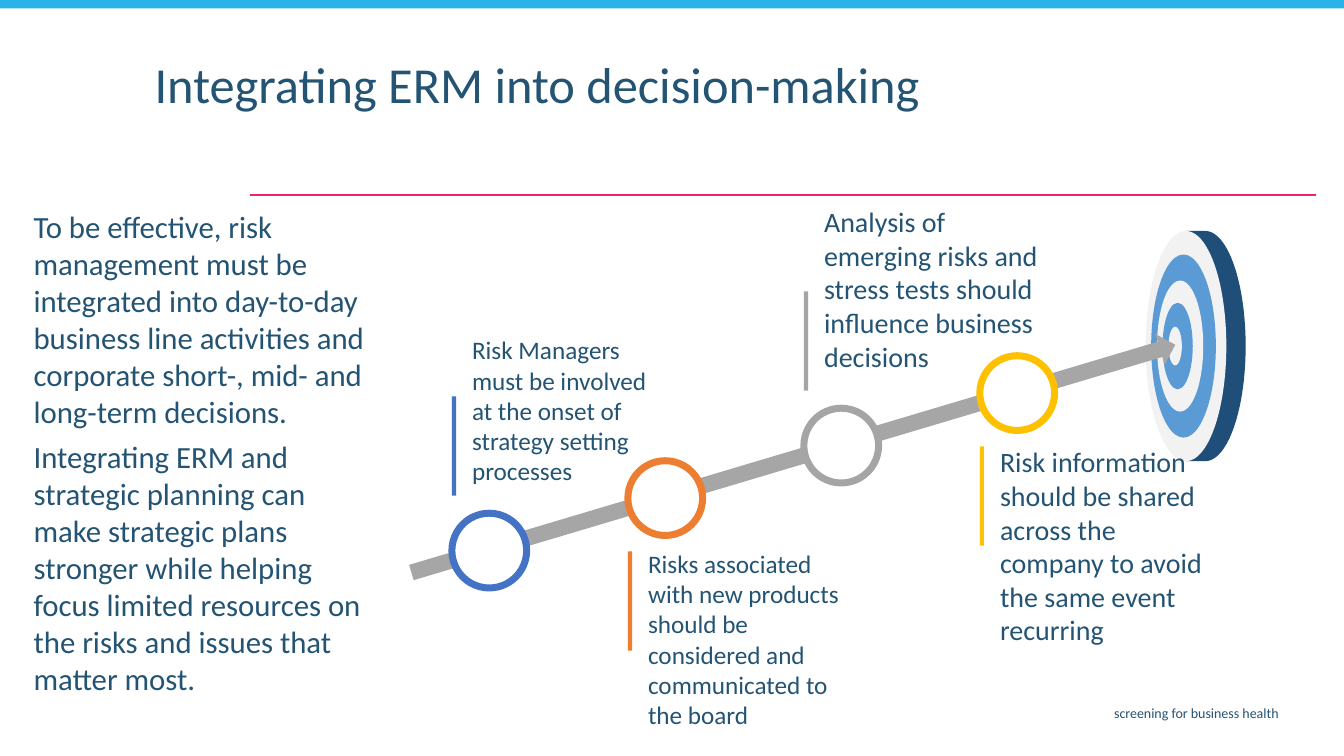
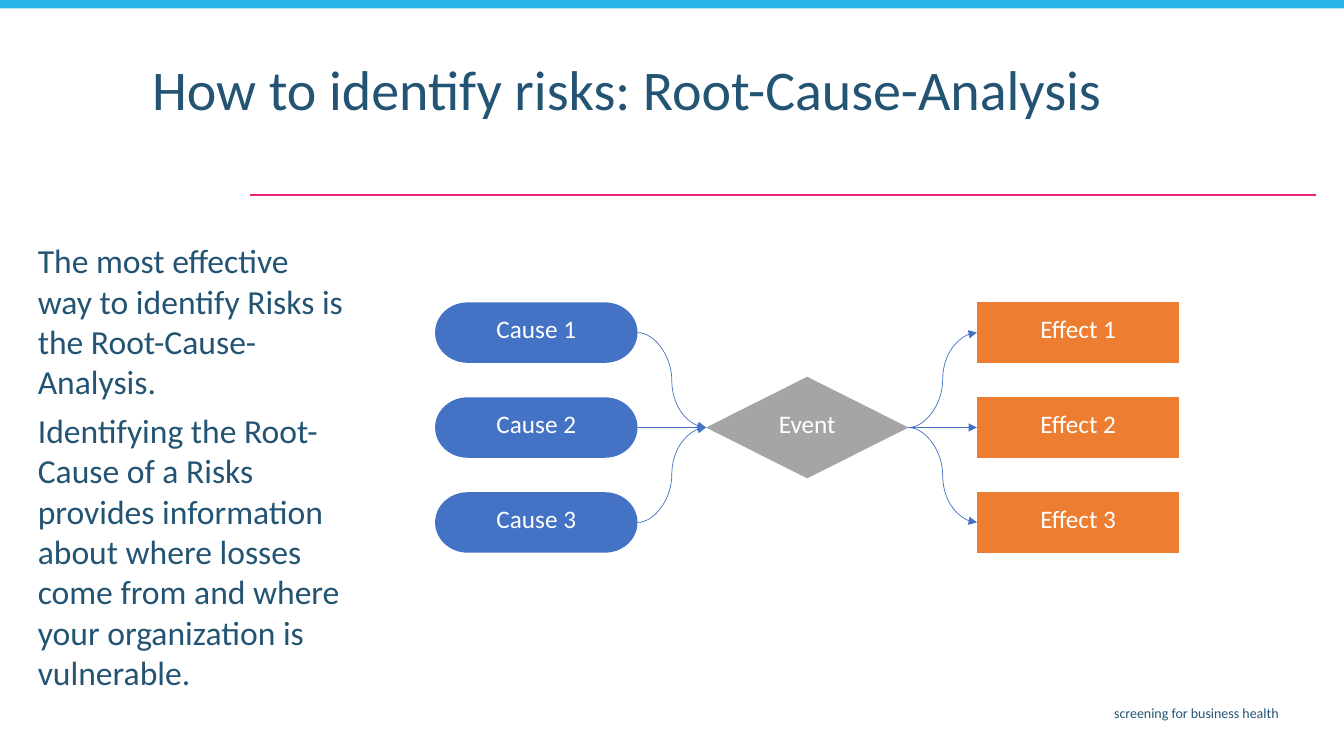
from math import cos, pi, sin

from pptx import Presentation
from pptx.dml.color import RGBColor
from pptx.enum.shapes import MSO_CONNECTOR, MSO_SHAPE
from pptx.enum.text import MSO_ANCHOR, MSO_AUTO_SIZE, PP_ALIGN
from pptx.oxml.ns import qn
from pptx.oxml.xmlchemy import OxmlElement
from pptx.util import Emu, Pt

RECT, OVAL, ARROW = MSO_SHAPE.RECTANGLE, MSO_SHAPE.OVAL, MSO_SHAPE.RIGHT_ARROW
PILL = MSO_SHAPE.FLOWCHART_TERMINATOR
BOX = MSO_SHAPE.FLOWCHART_PROCESS
GEM = MSO_SHAPE.FLOWCHART_DECISION
FLAT, CURVE = MSO_CONNECTOR.STRAIGHT, MSO_CONNECTOR.CURVE
TOP, MID = MSO_ANCHOR.TOP, MSO_ANCHOR.MIDDLE
LEFT, MIDST, RIGHT = PP_ALIGN.LEFT, PP_ALIGN.CENTER, PP_ALIGN.RIGHT
FONT = "Calibri"
HUES = {
    "ink": "245473", "band": "29B3E8", "rule": "EC2179", "white": "FFFFFF",
    "blue": "4472C4", "orange": "ED7D31", "grey": "A5A5A5", "gold": "FFC000",
    "shaft": "A6A6A6", "rim": "1F4E79", "pale": "F2F2F2", "sky": "5B9BD5",
}
INK = {name: RGBColor.from_string(code) for name, code in HUES.items()}

deck = Presentation()
deck.slide_width, deck.slide_height = Emu(12192000), Emu(6858000)
CELL = deck.slide_width // 160  # square cells: 160 columns by 90 rows


def cells(*spans):
    return [Emu(round(span * CELL)) for span in spans]


def say(frame, texts, size, hue="ink", pad=(1.2, 0.6), align=LEFT,
        anchor=TOP, lead=None, gap=0):
    frame.word_wrap, frame.auto_size = True, MSO_AUTO_SIZE.NONE
    frame.vertical_anchor = anchor
    side, edge = cells(*pad)
    frame.margin_left = frame.margin_right = side
    frame.margin_top = frame.margin_bottom = edge
    for i, text in enumerate(texts):
        para = frame.add_paragraph() if i else frame.paragraphs[0]
        props = para._p.get_or_add_pPr()
        props.set("marL", "0")
        props.set("indent", "0")
        props.append(OxmlElement("a:buNone"))
        para.alignment, para.line_spacing = align, lead
        para.space_before = Pt(gap if i else 0)
        for j, part in enumerate(text.split("\n")):
            if j:
                para.add_line_break()
            run = para.add_run()
            run.text = part
            run.font.name, run.font.size = FONT, Pt(size)
            run.font.color.rgb = INK[hue]


# Slides with their titles and body texts
plain = deck.slide_layouts[1]
for spot in list(plain.placeholders):
    if spot.placeholder_format.idx >= 10:
        spot.element.getparent().remove(spot.element)

pages = []
for title, size, head, texts, small, area in [
    ("Integrating ERM into decision-making", 36, (17.2, 6.5, 116, 9.1),
     ["To be effective, risk management must be integrated into day-to-day "
      "business line activities and corporate short-, mid- and long-term "
      "decisions.",
      "Integrating ERM and strategic planning can make strategic plans "
      "stronger while helping focus limited resources on the risks and "
      "issues that matter most."], 22, (2.9, 24.2, 43.1, 55.4)),
    ("How to identify risks: Root-Cause-Analysis", 40, (16.9, 6.8, 116, 9.1),
     ["The most effective way to identify Risks is the Root-Cause-Analysis.",
      "Identifying the Root-Cause of a Risks provides information about "
      "where losses come from and where your organization is vulnerable."],
     24, (3.4, 28.1, 39.4, 56)),
]:
    page = deck.slides.add_slide(plain)
    top, body = page.placeholders
    for spot, place in ((top, head), (body, area)):
        spot.left, spot.top, spot.width, spot.height = cells(*place)
    say(top.text_frame, [title], size, lead=0.9)
    say(body.text_frame, texts, small, pad=(1.1, 0.5), gap=6)
    pages.append(page)
goal, chain = [page.shapes for page in pages]
lines = []  # connector, colour, weight, arrowhead
solids = []  # shape, fill colour

# Band, rule and footer, shared through the layout
band = goal.add_shape(RECT, *cells(0, 0, 160, 1))
solids.append((band, "band"))
rule = goal.add_connector(FLAT, *cells(156.7, 23.2, 29.8, 23.2))
lines.append((rule, "rule", 1.5, False))
foot = goal.add_textbox(*cells(43.8, 83.3, 109.6, 3.5))
say(foot.text_frame, ["screening for business health"], 10, align=RIGHT)
for part in (rule, band, foot):
    plain.shapes.element.append(part.element)

# Target: thick rim, then rings from large to small
AXIS, HALF = 41.2, 13.7
arc = [(143.5 + 4.8 * cos(turn), AXIS + HALF * sin(turn))
       for turn in (pi * (k / 40 - 0.5) for k in range(41))]
pen = goal.build_freeform(*cells(141.2, AXIS - HALF))
pen.add_line_segments([cells(*dot) for dot in arc]
                      + [cells(141.2, AXIS + HALF)])
solids.append((pen.convert_to_shape(), "rim"))
rings = [(141.2, 9.6, 27.4), (140.9, 7.7, 21.8), (140.5, 5.5, 15.6),
         (140.2, 3.6, 10.3), (139.9, 1.6, 4.6)]
for i, (mid, wide, high) in enumerate(rings):
    ring = goal.add_shape(
        OVAL, *cells(mid - wide / 2, AXIS - high / 2, wide, high))
    solids.append((ring, "sky" if i % 2 else "pale"))

# Arrow with four steps, notes above and below in turn
shaft = goal.add_shape(ARROW, *cells(47, 52.7, 94.9, 3.8))
shaft.rotation = 343.4
solids.append((shaft, "shaft"))
steps = [
    ("blue", 18, 39.6, 23.3, "Risk Managers must be involved at the onset of "
     "strategy setting processes"),
    ("orange", 18, 65, 25.3, "Risks associated with new products should be "
     "considered and communicated to the board"),
    ("grey", 20, 24.1, 27.7, "Analysis of emerging risks and stress tests "
     "should influence business decisions"),
    ("gold", 20, 52.7, 27.2, "Risk information\nshould be shared\nacross the "
     "company to avoid the same event recurring"),
]
knobs = []
for i, (hue, size, top, wide, text) in enumerate(steps):
    x, y = 53.8 + 20.95 * i, 61.1 - 6.25 * i
    knob = goal.add_shape(OVAL, *cells(x, y, 8.9, 8.9))
    solids.append((knob, "white"))
    knobs.append((knob, hue))
    shift = 10.8 if i % 2 else -13.9
    bar = goal.add_shape(RECT, *cells(x, y + shift, 0.5, 11.8))
    solids.append((bar, hue))
    note = goal.add_textbox(*cells(x + 1.9, top, wide, 22))
    say(note.text_frame, [text], size, pad=(0.5, 0.25))

# Causes, event and effects on three columns and three rows
nodes = {}
for col, row, kind, hue, text in [
    (1, 1, GEM, "grey", "Event"),
    *[(0, r, PILL, "blue", f"Cause {r + 1}") for r in range(3)],
    *[(2, r, BOX, "orange", f"Effect {r + 1}") for r in range(3)],
]:
    high = 12.1 if kind == GEM else 7.2
    mid = 39.6 + 11.3 * row
    node = chain.add_shape(
        kind, *cells(51.8 + 32.25 * col, mid - high / 2, 24.1, high))
    say(node.text_frame, [text], 18, "white", (0.5, 0.25), MIDST, MID,
        Pt(15.4))
    solids.append((node, hue))
    nodes[col, row] = node
for row in range(3):
    for start, end in (((0, row), (1, 1)), ((1, 1), (2, row))):
        link = chain.add_connector(FLAT if row == 1 else CURVE, 0, 0, 0, 0)
        link.begin_connect(nodes[start], 3)
        link.end_connect(nodes[end], 1)
        lines.append((link, "blue", 0.5, True))

# Fills, outlines and arrowheads
for shape, hue in solids:
    shape.shadow.inherit = False
    shape.fill.solid()
    shape.fill.fore_color.rgb = INK[hue]
    shape.line.fill.background()
for knob, hue in knobs:
    knob.line.color.rgb, knob.line.width = INK[hue], Pt(5)
for line, hue, weight, arrow in lines:
    line.line.color.rgb, line.line.width = INK[hue], Pt(weight)
    props = line.element.spPr
    if arrow:
        tip = OxmlElement("a:tailEnd")
        tip.set("type", "triangle")
        props.find(qn("a:ln")).append(tip)
    props.append(OxmlElement("a:effectLst"))

deck.save("out.pptx")
